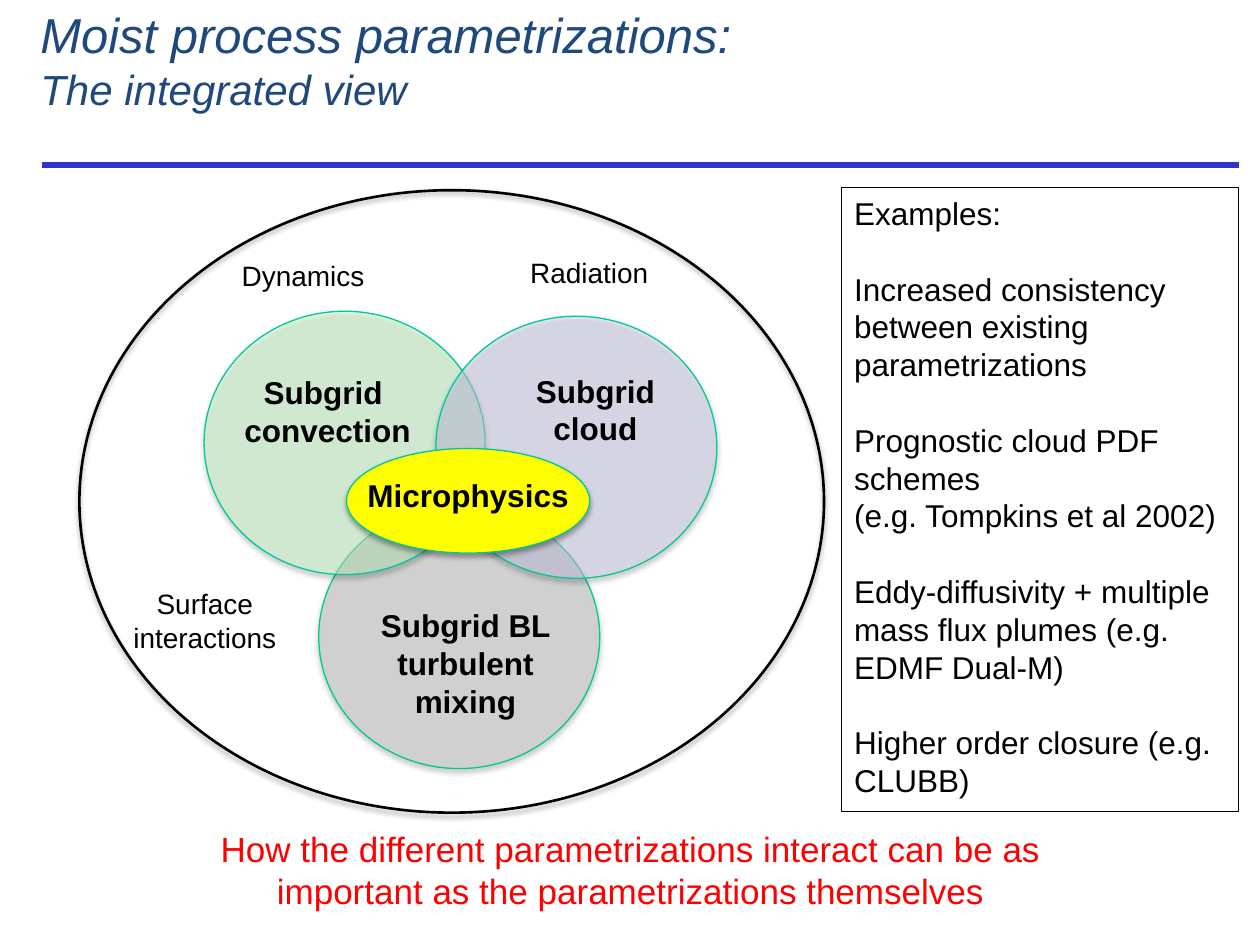
from dataclasses import dataclass

import pptx
import pptx.dml.color
import pptx.enum.shapes
import pptx.enum.text
import pptx.oxml
import pptx.oxml.ns
import pptx.util
from pptx.util import Inches

MSO_SHAPE = pptx.enum.shapes.MSO_SHAPE
ALIGN = pptx.enum.text.PP_ALIGN
A_NS = pptx.oxml.ns.nsdecls("a")


@dataclass(frozen=True)
class Theme:
    font: str = "Arial"
    title: str = "1F497D"
    rule: str = "3333CC"
    ink: str = "000000"
    outline: str = "00C896"
    convection: str = "CCFFCC"
    cloud: str = "D6D6F5"
    mixing: str = "CCCCCC"
    microphysics: str = "FFFF00"
    message: str = "FF0000"
    title_size: float = 28
    subtitle_size: float = 24
    message_size: float = 20
    body_size: float = 18
    label_size: float = 16


THEME = Theme()


@dataclass(frozen=True)
class Box:
    left: float
    top: float
    width: float
    height: float

    def emu(self) -> tuple:
        return tuple(Inches(v) for v in (self.left, self.top, self.width, self.height))


@dataclass(frozen=True)
class Oval:
    box: Box
    fill: str | None
    alpha: int = 100
    line: str = THEME.outline
    line_width: float = 0.75


@dataclass(frozen=True)
class Label:
    box: Box
    text: str
    size: float = THEME.body_size
    bold: bool = False
    color: str = THEME.ink
    align: ALIGN = ALIGN.CENTER


OVALS = [
    Oval(Box(2.53, 4.01, 2.23, 2.09), THEME.mixing, 48),
    Oval(Box(1.62, 2.47, 2.23, 2.09), THEME.convection, 48),
    Oval(Box(3.46, 2.51, 2.23, 2.08), THEME.cloud, 48),
    Oval(Box(2.75, 3.56, 1.93, 0.83), THEME.microphysics),
    Oval(Box(0.63, 1.51, 5.91, 4.94), None, line=THEME.ink, line_width=1.5),
]

LABELS = [
    Label(Box(2.71, 4.76, 1.97, 1.01), "Subgrid BL turbulent mixing", bold=True),
    Label(Box(1.67, 2.91, 1.86, 0.71), "Subgrid \nconvection", bold=True),
    Label(Box(3.98, 2.9, 1.49, 0.71), "Subgrid cloud", bold=True),
    Label(Box(2.75, 3.73, 1.93, 0.4), "Microphysics", bold=True),
    Label(Box(1.82, 2, 1.98, 0.37), "Dynamics", THEME.label_size, align=ALIGN.LEFT),
    Label(Box(4.11, 1.98, 1.98, 0.37), "Radiation", THEME.label_size, align=ALIGN.LEFT),
    Label(Box(0.82, 4.61, 1.61, 0.64), "Surface interactions", THEME.label_size),
    Label(Box(1.49, 6.52, 7.03, 0.77),
          "How the different parametrizations interact can be as important "
          "as the parametrizations themselves",
          THEME.message_size, color=THEME.message),
]

EXAMPLES = Label(
    Box(6.68, 1.49, 3.15, 4.95),
    "Examples:\n"
    "Increased consistency between existing parametrizations\n"
    "Prognostic cloud PDF schemes\n"
    "(e.g. Tompkins et al 2002)\n"
    "Eddy-diffusivity + multiple mass flux plumes (e.g. EDMF Dual-M)\n"
    "Higher order closure (e.g. CLUBB)",
    align=ALIGN.LEFT,
)


def rgb(color: str) -> pptx.dml.color.RGBColor:
    return pptx.dml.color.RGBColor.from_string(color)


def style_run(r, size: float, color: str) -> None:
    r.font.name = THEME.font
    r.font.size = pptx.util.Pt(size)
    r.font.color.rgb = rgb(color)


def add_shadow(sp) -> None:
    """Give the shape a soft black shadow straight below it."""
    sp._element.spPr.append(pptx.oxml.parse_xml(
        f'<a:effectLst {A_NS}><a:outerShdw blurRad="39370" dist="22860" dir="5400000" '
        'rotWithShape="0"><a:srgbClr val="000000"><a:alpha val="35000"/></a:srgbClr>'
        '</a:outerShdw></a:effectLst>'))


def add_oval(slide, oval: Oval) -> None:
    sp = slide.shapes.add_shape(MSO_SHAPE.OVAL, *oval.box.emu())
    if oval.fill is None:
        sp.fill.background()
    else:
        sp.fill.solid()
        sp.fill.fore_color.rgb = rgb(oval.fill)
        if oval.alpha < 100:
            color = sp._element.spPr.find(".//" + pptx.oxml.ns.qn("a:srgbClr"))
            color.append(pptx.oxml.parse_xml(f'<a:alpha {A_NS} val="{oval.alpha * 1000}"/>'))
    sp.line.color.rgb = rgb(oval.line)
    sp.line.width = pptx.util.Pt(oval.line_width)
    add_shadow(sp)


def add_label(slide, label: Label):
    sp = slide.shapes.add_textbox(*label.box.emu())
    tf = sp.text_frame
    tf.word_wrap = True
    tf.text = label.text
    for p in tf.paragraphs:
        p.alignment = label.align
        for r in p.runs:
            style_run(r, label.size, label.color)
            r.font.bold = label.bold
    return sp


def add_title(slide) -> None:
    sp = slide.shapes.title
    sp.left, sp.top, sp.width, sp.height = Box(0.22, 0.16, 7.42, 0.62).emu()
    tf = sp.text_frame
    tf.auto_size = pptx.enum.text.MSO_AUTO_SIZE.NONE
    tf.vertical_anchor = pptx.enum.text.MSO_ANCHOR.MIDDLE
    tf.text = "Moist process parametrizations:\vThe integrated view"
    p = tf.paragraphs[0]
    p.alignment = ALIGN.LEFT
    for r, size in zip(p.runs, (THEME.title_size, THEME.subtitle_size)):
        style_run(r, size, THEME.title)
        r.font.italic = True


def add_rule(slide) -> None:
    y = Inches(1.31)
    line = slide.shapes.add_connector(
        pptx.enum.shapes.MSO_CONNECTOR.STRAIGHT, Inches(0.33), y, Inches(9.83), y)
    line.line.color.rgb = rgb(THEME.rule)
    line.line.width = pptx.util.Pt(3)
    line._element.spPr.append(pptx.oxml.parse_xml(f"<a:effectLst {A_NS}/>"))


def add_examples(slide) -> None:
    sp = add_label(slide, EXAMPLES)
    sp.line.color.rgb = rgb(THEME.ink)
    sp.line.width = pptx.util.Pt(0.75)
    for p in sp.text_frame.paragraphs[1:]:
        if not p.text.startswith("("):
            p.space_before = pptx.util.Pt(THEME.body_size * 1.2)


def main() -> None:
    prs = pptx.Presentation()
    prs.slide_width, prs.slide_height = Inches(10), Inches(7.5)
    slide = prs.slides.add_slide(prs.slide_layouts[5])
    add_title(slide)
    add_rule(slide)
    for oval in OVALS:
        add_oval(slide, oval)
    for label in LABELS:
        add_label(slide, label)
    add_examples(slide)
    prs.save("out.pptx")


if __name__ == "__main__":
    main()
